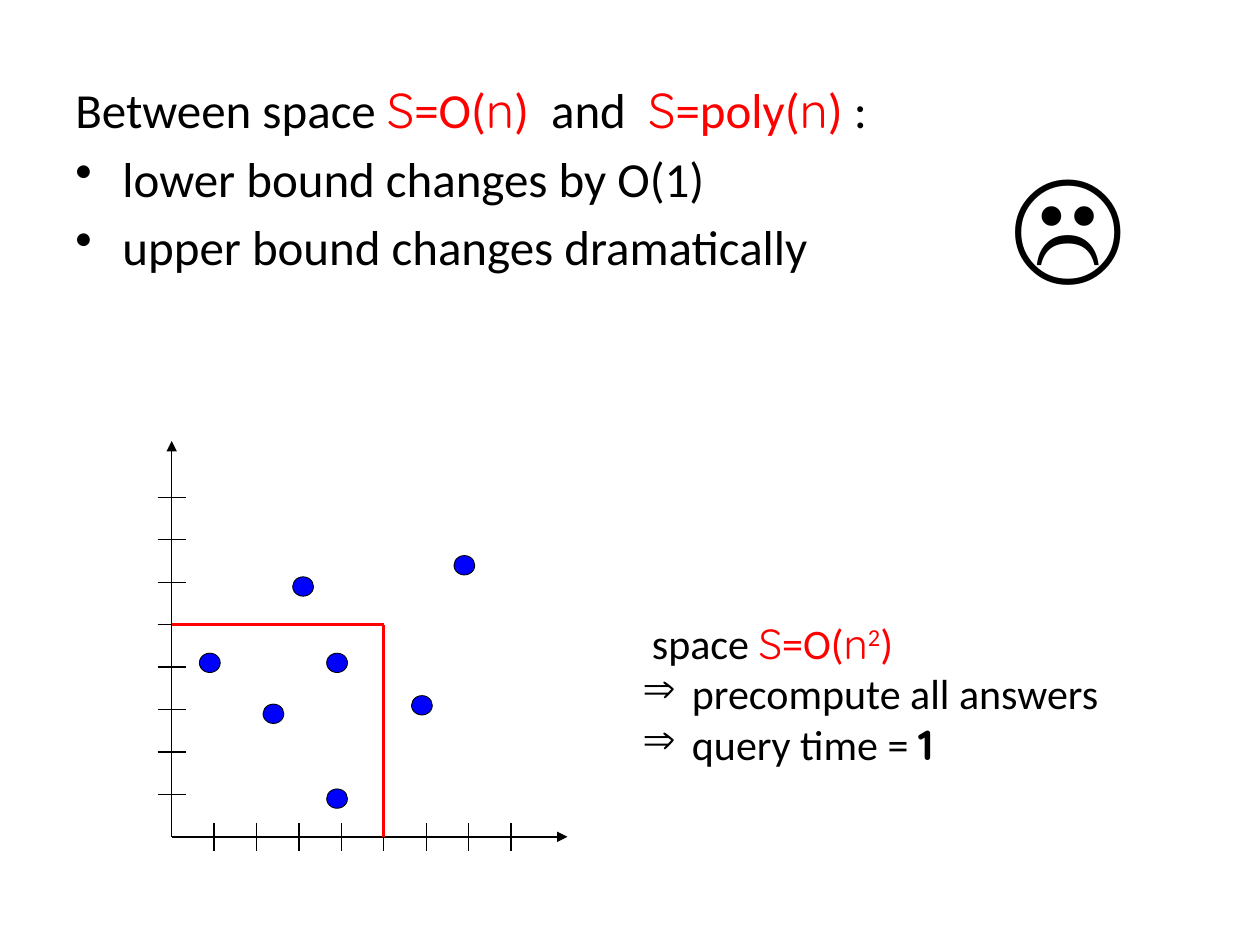
from lxml import etree
from pptx import Presentation, util as u
from pptx.dml.color import RGBColor
from pptx.enum import shapes as sh, text as tx
from pptx.oxml.ns import qn

HUES = {"ink": "000000", "red": "FF0000", "dot": "0000FF"}
SANS, MATH = "Calibri", "Quicksand"


def hue(name):
    return RGBColor.from_string(HUES[name])


def write(par, text, size=28, font=SANS, color="ink", bold=None, base=None):
    run = par.add_run()
    run.text = text
    run.font.size = u.Pt(size)
    run.font.name = font
    run.font.bold = bold
    run.font.color.rgb = hue(color)
    if base:
        run.font._element.set("baseline", str(base * 1000))


def math(par, parts, size):
    for part in parts:
        font = MATH if part in ("S", "n") else SANS
        write(par, part, size=size, font=font, color="red",
              base=30 if part == "2" else None)


def bullet(par, char, left, hang):
    props = par._p.get_or_add_pPr()
    props.set("marL", str(u.Cm(left)))
    props.set("indent", str(u.Cm(-hang)))
    if char:
        etree.SubElement(props, qn("a:buChar")).set("char", char)


def frame(slide, box, count, gap=0):
    area = slide.shapes.add_textbox(*map(u.Cm, box)).text_frame
    area.word_wrap = True
    area.auto_size = tx.MSO_AUTO_SIZE.NONE
    pars = [area.paragraphs[0]] + [area.add_paragraph() for _ in range(count - 1)]
    for par in pars:
        par.space_before = u.Pt(gap)
    return pars


def claim(slide, box):
    head, *items = frame(slide, box, 3, gap=5.6)
    bullet(head, None, 0.95, 0.95)
    write(head, "Between space ")
    math(head, ["S", "=O(", "n", ")  "], 28)
    write(head, "and  ")
    math(head, ["S", "=poly(", "n", ")"], 28)
    write(head, " :")
    lines = ["lower bound changes by O(1)", "upper bound changes dramatically"]
    for par, line in zip(items, lines):
        bullet(par, "•", 0.95, 0.95)
        write(par, line)


def face(slide, box):
    write(frame(slide, box, 1)[0], "☹", size=72)


def result(slide, box):
    head, *items = frame(slide, box, 3)
    write(head, " space ", size=24)
    math(head, ["S", "=O(", "n", "2", ")"], 24)
    lines = ["precompute all answers", "query time = "]
    for par, line in zip(items, lines):
        bullet(par, "⇒", 1, 1)
        write(par, line, size=24)
    write(items[-1], "1", size=24, font=MATH, bold=True)


def line(group, start, end, color="ink", width=0.75, arrow=False):
    link = group.shapes.add_connector(
        sh.MSO_CONNECTOR.STRAIGHT, *map(u.Cm, (*start, *end)))
    link.line.color.rgb = hue(color)
    link.line.width = u.Pt(width)
    if arrow:
        stroke = link.line._get_or_add_ln()
        etree.SubElement(stroke, qn("a:tailEnd")).set("type", "triangle")
    etree.SubElement(link._element.spPr, qn("a:effectLst"))


def dot(group, x, y, wide=0.42, high=0.39):
    mark = group.shapes.add_shape(
        sh.MSO_SHAPE.FLOWCHART_CONNECTOR,
        *map(u.Cm, (x - wide / 2, y - high / 2, wide, high)))
    mark.shadow.inherit = False
    mark.fill.solid()
    mark.fill.fore_color.rgb = hue("dot")
    mark.line.color.rgb = hue("ink")
    mark.line.width = u.Pt(0.5)


def plot(slide, box):
    left, top, wide, high = box
    base = top + high
    step, half = wide / 9.33, 0.28
    group = slide.shapes.add_group_shape()

    def at(x, y):
        return left + x * step, base - y * step

    zero = at(0, 0)
    line(group, zero, (left, top), arrow=True)
    line(group, zero, (left + wide, base), arrow=True)
    for k in range(1, 9):
        x, y = at(k, k)
        line(group, (x, base - half), (x, base + half))
        line(group, (left - half, y), (left + half, y))
    for end in (at(5, 0), at(0, 5)):
        line(group, end, at(5, 5), color="red", width=1.5)
    spots = [(0.9, 4.1), (2.4, 2.9), (3.9, 0.9), (3.9, 4.1),
             (3.1, 5.9), (6.9, 6.4), (5.9, 3.1)]
    for spot in spots:
        dot(group, *at(*spot))


def main():
    deck = Presentation()
    deck.slide_width, deck.slide_height = u.Cm(25.4), u.Cm(19.05)
    slide = deck.slides.add_slide(deck.slide_layouts[6])
    claim(slide, (1.27, 1.48, 22.86, 15.55))
    face(slide, (20.12, 2.74, 2.74, 3.33))
    plot(slide, (3.46, 8.89, 7.98, 7.98))
    result(slide, (12.7, 12.32, 10.6, 3.33))
    deck.save("out.pptx")


if __name__ == "__main__":
    main()
